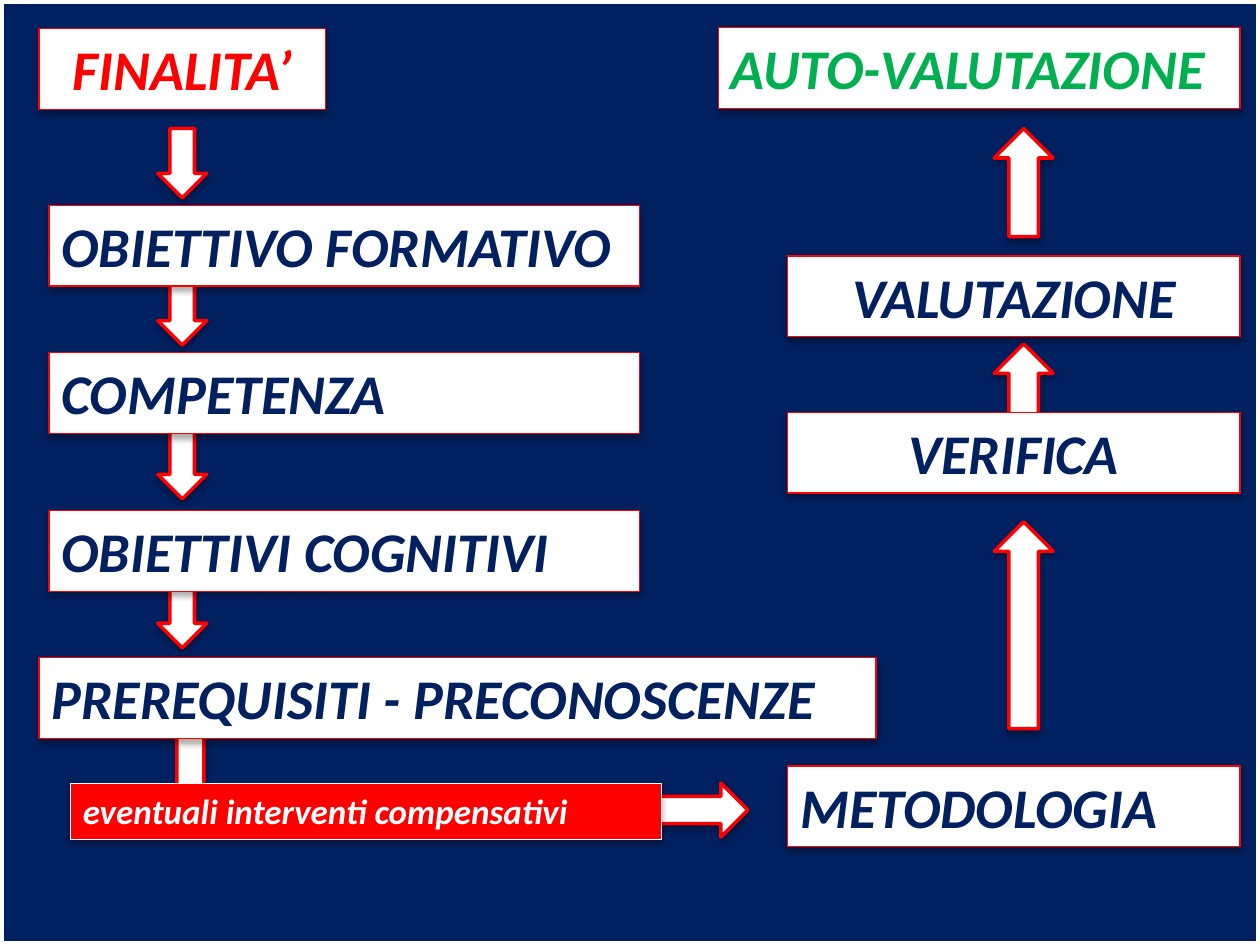
"""Build a slide that charts a teaching plan from aims to self-assessment."""
from typing import NamedTuple

from lxml.etree import SubElement
from pptx import Presentation
from pptx.dml.color import RGBColor
from pptx.enum.shapes import MSO_SHAPE as Preset
from pptx.enum.text import MSO_ANCHOR as Anchor
from pptx.enum.text import MSO_AUTO_SIZE as AutoSize
from pptx.enum.text import PP_ALIGN as Align
from pptx.oxml.ns import qn
from pptx.util import Cm, Pt

NAVY, RED, GREEN, WHITE = "002060", "FF0000", "00B050", "FFFFFF"
PAGE_WIDTH, PAGE_HEIGHT = 25.4, 19.05


class Arrow(NamedTuple):
    left: float
    top: float
    width: float
    height: float
    rotation: int = 0
    preset: Preset = Preset.DOWN_ARROW


class Label(NamedTuple):
    text: str
    left: float
    top: float
    width: float
    height: float = 1.63
    color: str = NAVY
    align: Align = Align.LEFT
    fill: str = WHITE
    line: str = RED
    size: int = 32


ARROWS = [
    Arrow(8.23, 10.03, 2.18, 11.51, 90, Preset.BENT_UP_ARROW),
    *(Arrow(3.18, top, 0.99, 1.4) for top in (2.59, 5.56, 8.66, 11.66)),
    *(Arrow(20.04, top, 1.19, height, 180)
      for top, height in ((2.59, 2.18), (6.93, 2.18), (10.52, 4.17))),
]

LABELS = [
    Label("FINALITA’", 0.79, 0.58, 5.77, color=RED, align=Align.CENTER),
    Label("OBIETTIVO FORMATIVO", 0.99, 4.14, 11.91),
    Label("COMPETENZA", 0.99, 7.11, 11.91),
    Label("OBIETTIVI COGNITIVI", 0.99, 10.29, 11.91),
    Label("PREREQUISITI - PRECONOSCENZE", 0.79, 13.26, 16.87),
    Label("METODOLOGIA", 15.88, 15.44, 9.12),
    Label("VERIFICA", 15.88, 8.31, 9.12, align=Align.CENTER),
    Label("VALUTAZIONE", 15.88, 5.16, 9.12, align=Align.CENTER),
    Label("AUTO-VALUTAZIONE", 14.48, 0.56, 10.52, color=GREEN),
    Label("eventuali interventi compensativi", 1.42, 15.8, 11.91, 1.12,
          color=WHITE, fill=RED, line=WHITE, size=20),
]


def rgb(value: str) -> RGBColor:
    """Turn a hex string into a colour."""
    return RGBColor.from_string(value)


def add_shadow(shape) -> None:
    """Give the shape a soft shadow that falls straight down."""
    effects = shape._element.spPr.find(qn("a:effectLst"))
    shadow = SubElement(effects, qn("a:outerShdw"), blurRad="44450", dist="27940",
                        dir="5400000", algn="ctr", rotWithShape="0")
    color = SubElement(shadow, qn("a:srgbClr"), val="000000")
    SubElement(color, qn("a:alpha"), val="32000")


def add_block(page, preset: Preset, left: float, top: float, width: float, height: float,
              *, line: str, weight: float, fill: str | None = None):
    """Draw a preset shape; a filled one also casts a shadow."""
    shape = page.shapes.add_shape(preset, Cm(left), Cm(top), Cm(width), Cm(height))
    shape.shadow.inherit = False
    shape.line.color.rgb = rgb(line)
    shape.line.width = Pt(weight)
    if fill is None:
        shape.fill.background()
    else:
        shape.fill.solid()
        shape.fill.fore_color.rgb = rgb(fill)
        add_shadow(shape)
    return shape


def add_arrow(page, arrow: Arrow) -> None:
    """Draw a white block arrow with a red outline."""
    shape = add_block(page, arrow.preset, arrow.left, arrow.top, arrow.width, arrow.height,
                      line=RED, weight=2, fill=WHITE)
    shape.rotation = arrow.rotation


def write_text(box, text: str, *, size: int, color: str, align: Align) -> None:
    """Write one bold italic line into the box."""
    frame = box.text_frame
    frame.word_wrap = True
    frame.auto_size = AutoSize.SHAPE_TO_FIT_TEXT
    frame.vertical_anchor = Anchor.TOP
    para = frame.paragraphs[0]
    para.alignment = align
    span = para.add_run()
    span.text = text
    span.font.name = "Calibri"
    span.font.size = Pt(size)
    span.font.bold = span.font.italic = True
    span.font.color.rgb = rgb(color)


def add_label(page, label: Label) -> None:
    """Draw a box with its text."""
    box = add_block(page, Preset.RECTANGLE, label.left, label.top, label.width, label.height,
                    line=label.line, weight=0.75, fill=label.fill)
    write_text(box, label.text, size=label.size, color=label.color, align=label.align)


def main() -> None:
    """Build the deck and save it."""
    deck = Presentation()
    deck.slide_width, deck.slide_height = Cm(PAGE_WIDTH), Cm(PAGE_HEIGHT)
    page = deck.slides.add_slide(deck.slide_layouts[6])
    page.background.fill.solid()
    page.background.fill.fore_color.rgb = rgb(NAVY)
    for arrow in ARROWS:
        add_arrow(page, arrow)
    add_block(page, Preset.RECTANGLE, 0, 0, PAGE_WIDTH, PAGE_HEIGHT, line=WHITE, weight=4.5)
    for label in LABELS:
        add_label(page, label)
    deck.save("out.pptx")


if __name__ == "__main__":
    main()
